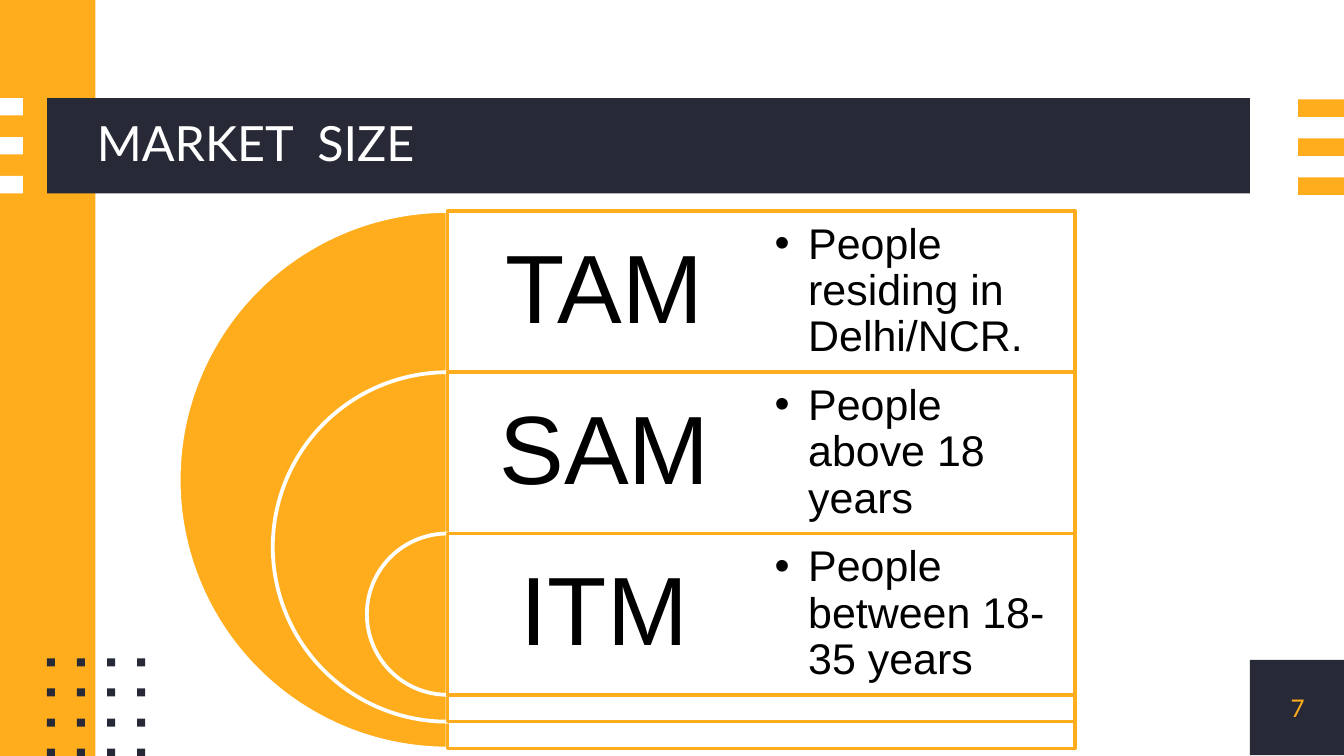
"""Build the market size slide with nested half circles and a text panel for each level."""
import pptx
import pptx.dml.color
import pptx.enum.shapes
import pptx.enum.text
import pptx.oxml
import pptx.oxml.ns
import pptx.util
from pptx.util import Inches

TITLE = "MARKET  SIZE"
PAGE_NUMBER = "7"
LEVELS = [
    ("TAM", "People residing in Delhi/NCR."),
    ("SAM", "People above 18 years"),
    ("ITM", "People between 18-35 years"),
]
THEME = {
    "orange": "FFAD1D", "dark": "272A36", "white": "FFFFFF", "black": "000000",
    "heading_font": "Lato", "body_font": "Arial",
    "title_size": 26, "number_size": 13, "label_size": 52, "detail_size": 23,
    "line_width": 2, "panel_alpha": 90,
}
SLIDE_WIDTH = 10
SLIDE_HEIGHT = SLIDE_WIDTH * 9 / 16
TITLE_BAR = (0.35, 0.73, 8.95, 0.71)
TITLE_AREA = (0.72, 0.73, 8.58, 0.71)
NUMBER_BOX = (9.3, 4.91, 0.71, 0.71)
SIDE_BAND = (0, 0, 0.71, SLIDE_HEIGHT)
STRIPE_TOP, STRIPE_STEP, STRIPE_HEIGHT = 0.73, 0.29, 0.13
DOT_LEFT, DOT_TOP, DOT_SPAN, DOT_SIZE, DOT_COUNT = 0.35, 4.9, 0.67, 0.06, 4
AXIS, CHART_TOP, ROW_HEIGHT, PANEL_WIDTH = 3.33, 1.57, 1.2, 4.67
DIAMETERS = [4, 2.6, 1.2]

SHAPES = pptx.enum.shapes.MSO_SHAPE
ALIGN = pptx.enum.text.PP_ALIGN


def color(name):
    return pptx.dml.color.RGBColor.from_string(THEME[name])


def add_box(page, area, fill, line=None, kind=SHAPES.RECTANGLE):
    box = page.shapes.add_shape(kind, *map(Inches, area))
    box.shadow.inherit = False
    box.fill.solid()
    box.fill.fore_color.rgb = color(fill)
    if line:
        box.line.color.rgb = color(line)
        box.line.width = pptx.util.Pt(THEME["line_width"])
    else:
        box.line.fill.background()
    return box


def add_text(page, area, text, size, font, ink, align=ALIGN.LEFT, inset=0, spacing=0.9):
    box = page.shapes.add_textbox(*map(Inches, area))
    frame = box.text_frame
    frame.text = text
    frame.word_wrap = True
    frame.vertical_anchor = pptx.enum.text.MSO_ANCHOR.MIDDLE
    frame.margin_left = frame.margin_right = Inches(inset)
    frame.margin_top = frame.margin_bottom = Inches(inset)
    para = frame.paragraphs[0]
    para.alignment = align
    para.line_spacing = spacing
    span = para.runs[0]
    span.font.size = pptx.util.Pt(THEME[size])
    span.font.name = THEME[font]
    span.font.color.rgb = color(ink)
    return para


def add_bullet(para, indent=0.25):
    properties = para._p.get_or_add_pPr()
    properties.set("marL", str(Inches(indent)))
    properties.set("indent", str(-Inches(indent)))
    namespace = pptx.oxml.ns.nsdecls("a")
    for part in (
        f'<a:buClr {namespace}><a:srgbClr val="{THEME["black"]}"/></a:buClr>',
        f'<a:buFont {namespace} typeface="{THEME["body_font"]}"/>',
        f'<a:buChar {namespace} char="•"/>',
    ):
        properties.append(pptx.oxml.parse_xml(part))


def set_alpha(box, percent):
    fill_color = box.fill._xPr.find(".//" + pptx.oxml.ns.qn("a:srgbClr"))
    fill_color.append(pptx.oxml.parse_xml(
        f'<a:alpha {pptx.oxml.ns.nsdecls("a")} val="{percent * 1000}"/>'))


def add_decoration(page):
    add_box(page, NUMBER_BOX, "dark")
    add_box(page, SIDE_BAND, "orange")
    add_box(page, TITLE_BAR, "dark")
    for index in range(3):
        top = STRIPE_TOP + index * STRIPE_STEP
        add_box(page, (0, top, 0.17, STRIPE_HEIGHT), "white")
        add_box(page, (9.66, top + 0.01, 0.34, STRIPE_HEIGHT), "orange")
    step = DOT_SPAN / (DOT_COUNT - 1)
    for row in range(DOT_COUNT):
        for column in range(DOT_COUNT):
            dot = (DOT_LEFT + column * step, DOT_TOP + row * step, DOT_SIZE, DOT_SIZE)
            add_box(page, dot, "dark")


def add_level(page, index):
    label, detail = LEVELS[index]
    diameter = DIAMETERS[index]
    top = CHART_TOP + index * ROW_HEIGHT
    half = PANEL_WIDTH / 2
    circle = add_box(page, (AXIS - diameter / 2, top, diameter, diameter),
                     "orange", "white", SHAPES.PIE)
    circle.adjustments[0] = 54
    circle.adjustments[1] = 162
    panel = add_box(page, (AXIS, top, PANEL_WIDTH, diameter), "white", "orange")
    set_alpha(panel, THEME["panel_alpha"])
    add_text(page, (AXIS, top, half, ROW_HEIGHT), label, "label_size", "body_font",
             "black", ALIGN.CENTER, 0.22)
    add_bullet(add_text(page, (AXIS + half, top, half, ROW_HEIGHT), detail, "detail_size",
                        "body_font", "black", inset=0.1))


def main():
    deck = pptx.Presentation()
    deck.slide_width, deck.slide_height = Inches(SLIDE_WIDTH), Inches(SLIDE_HEIGHT)
    page = deck.slides.add_slide(deck.slide_layouts[6])
    add_decoration(page)
    add_text(page, TITLE_AREA, TITLE, "title_size", "heading_font", "white")
    add_text(page, NUMBER_BOX, PAGE_NUMBER, "number_size", "heading_font", "orange",
             ALIGN.CENTER, spacing=1.0)
    for index in range(len(LEVELS)):
        add_level(page, index)
    deck.save("out.pptx")


if __name__ == "__main__":
    main()
